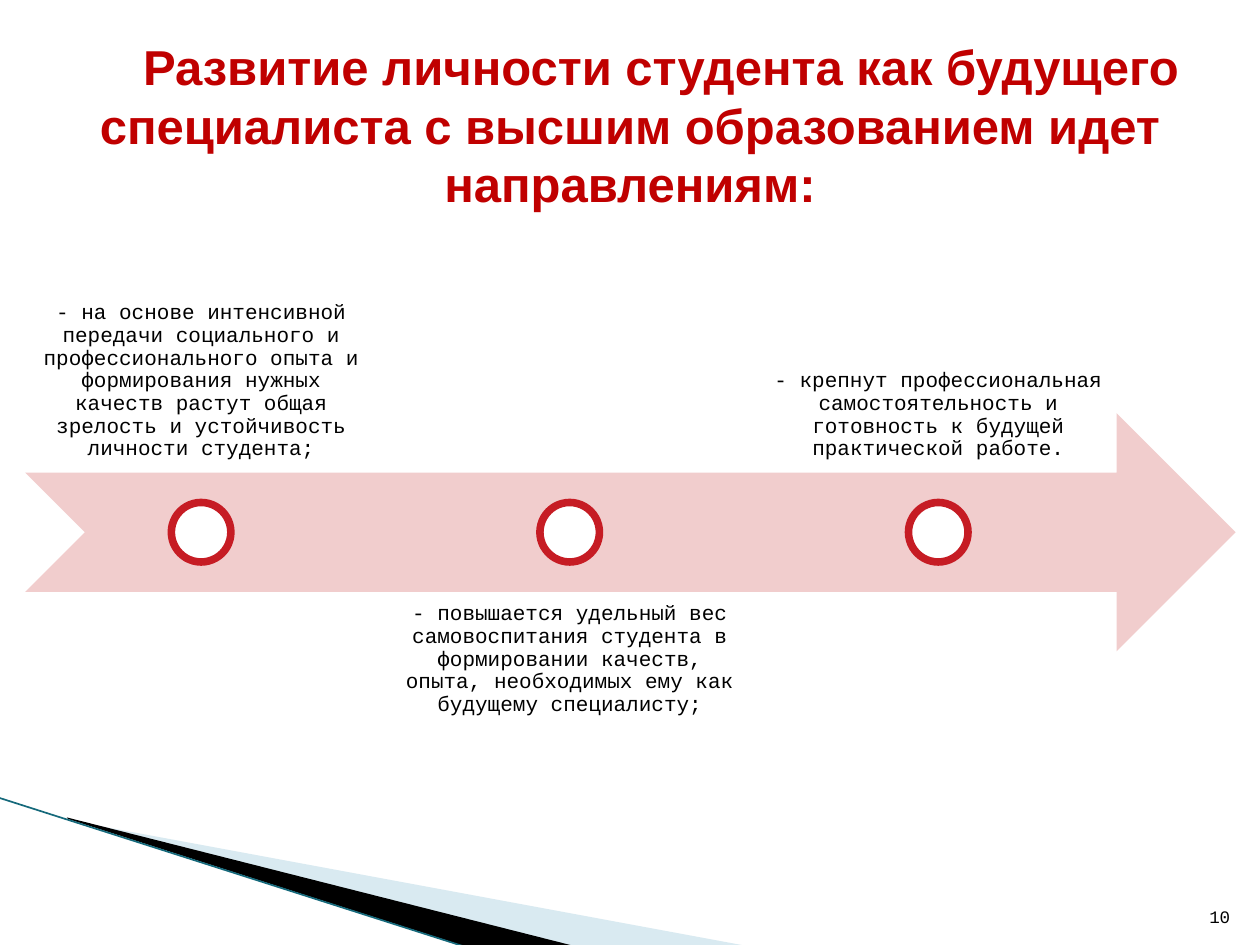
from lxml import etree
from pptx import Presentation
from pptx import util as u
from pptx.dml.color import RGBColor
from pptx.enum import shapes, text
from pptx.oxml.ns import qn


def paint(color_format, hex_color):
    color_format.rgb = RGBColor.from_string(hex_color)


class SlideBuilder:
    heading_font, body_font = "Arial", "Courier New"
    heading, ink, ring, band = "C00000", "000000", "C61C24", "F1CDCD"

    def __init__(self, slide):
        self.slide = slide

    def finish(self, shape, fill, line=None, weight=0):
        shape.shadow.inherit = False
        shape.fill.solid()
        paint(shape.fill.fore_color, fill)
        if line:
            paint(shape.line.color, line)
            shape.line.width = u.Pt(weight)
        else:
            shape.line.fill.background()
        return shape

    def preset(self, kind, left, top, width, height, *style):
        shape = self.slide.shapes.add_shape(
            kind, u.Cm(left), u.Cm(top), u.Cm(width), u.Cm(height))
        return self.finish(shape, *style)

    def wedge(self, points, fill, opacity=None):
        corners = [(u.Cm(x), u.Cm(y)) for x, y in points]
        outline = self.slide.shapes.build_freeform(*corners[0])
        outline.add_line_segments(corners[1:], close=True)
        shape = self.finish(outline.convert_to_shape(), fill)
        if opacity:
            color = shape._element.spPr.find(
                qn("a:solidFill") + "/" + qn("a:srgbClr"))
            etree.SubElement(color, qn("a:alpha"), val=str(opacity * 1000))

    def line(self, start, end, color, weight):
        edge = self.slide.shapes.add_connector(
            shapes.MSO_CONNECTOR.STRAIGHT, *(u.Cm(v) for v in start + end))
        paint(edge.line.color, color)
        edge.line.width = u.Pt(weight)
        etree.SubElement(edge._element.spPr, qn("a:effectLst"))

    def label(self, words, left, top, width, height, size, font, color,
              anchor, align, bold=False, inset=None):
        box = self.slide.shapes.add_textbox(
            u.Cm(left), u.Cm(top), u.Cm(width), u.Cm(height))
        frame = box.text_frame
        frame.word_wrap = True
        frame.vertical_anchor = anchor
        if inset is not None:
            frame.margin_left = frame.margin_right = u.Cm(inset)
            frame.margin_top = frame.margin_bottom = u.Cm(inset)
        paragraph = frame.paragraphs[0]
        paragraph.alignment = align
        run = paragraph.add_run()
        run.text = words
        run.font.size = u.Pt(size)
        run.font.name = font
        run.font.bold = bold
        paint(run.font.color, color)
        return paragraph

    def title(self, words):
        paragraph = self.label(
            words, 0, 0.91, 25.4, 3.2, 28, self.heading_font, self.heading,
            text.MSO_ANCHOR.MIDDLE, text.PP_ALIGN.CENTER, bold=True)
        paragraph._p.get_or_add_pPr().set("indent", str(u.Cm(1.25)))

    def milestone(self, words, left, above):
        width, dot = 7.09, 1.2
        top = 4.72 if above else 11.91
        anchor = text.MSO_ANCHOR.BOTTOM if above else text.MSO_ANCHOR.TOP
        paragraph = self.label(
            words, left, top, width, 4.8, 12, self.body_font, self.ink,
            anchor, text.PP_ALIGN.CENTER, inset=0.24)
        paragraph.line_spacing = 0.9
        paragraph.space_after = u.Pt(4.2)
        self.preset(shapes.MSO_SHAPE.OVAL, left + (width - dot) / 2, 10.13,
                    dot, dot, "FFFFFF", self.ring, 4.33)

    def page_number(self, number):
        self.label(number, 24.03, 17.8, 1.02, 1.02, 10, self.body_font,
                   self.ink, text.MSO_ANCHOR.BOTTOM, text.PP_ALIGN.RIGHT)


def main():
    deck = Presentation()
    deck.slide_width, deck.slide_height = u.Cm(25.4), u.Cm(19.05)
    page = SlideBuilder(deck.slides.add_slide(deck.slide_layouts[6]))

    page.wedge([(1.4, 16.54), (15.11, 19.08), (11.58, 19.08), (1.4, 16.51)],
               "A0CBDC", 40)
    page.wedge([(1.35, 16.48), (11.61, 19.08), (9.45, 19.1), (1.37, 16.51)],
               page.ink)
    page.line((-0.03, 16.08), (9.42, 19.1), "15697B", 0.95)

    page.preset(shapes.MSO_SHAPE.NOTCHED_RIGHT_ARROW,
                0.51, 8.33, 24.4, 4.8, page.band)
    directions = [
        "- на основе интенсивной передачи социального и профессионального "
        "опыта и формирования нужных качеств растут общая зрелость и "
        "устойчивость личности студента;",
        "- повышается удельный вес самовоспитания студента в формировании "
        "качеств, опыта, необходимых ему как будущему специалисту;",
        "- крепнут профессиональная самостоятельность и готовность к "
        "будущей практической работе.",
    ]
    for index, direction in enumerate(directions):
        page.milestone(direction, 0.51 + index * 7.43, above=index % 2 == 0)

    page.page_number("10")
    page.title("Развитие личности студента как будущего специалиста "
               "с высшим образованием идет направлениям:")
    deck.save("out.pptx")


if __name__ == "__main__":
    main()
